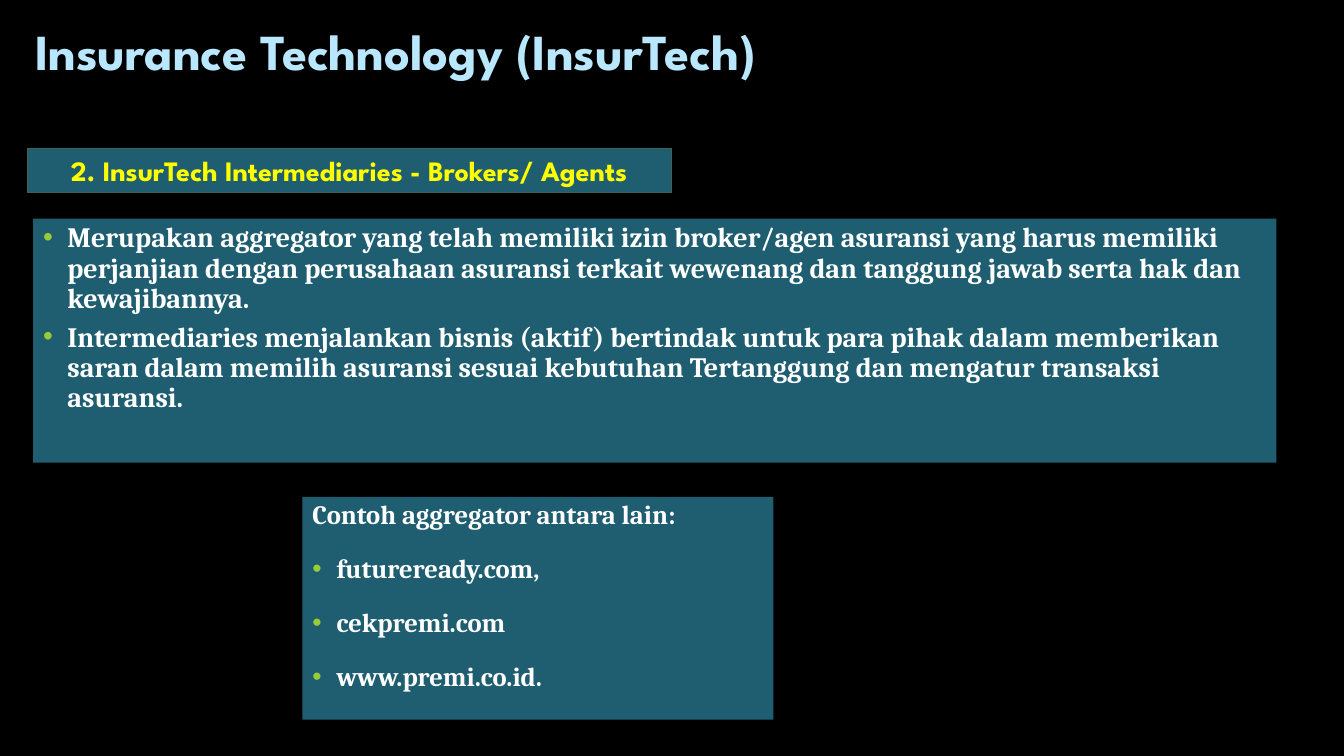
from lxml.etree import SubElement
from pptx import Presentation
from pptx.dml.color import RGBColor
from pptx.enum.shapes import MSO_SHAPE
from pptx.enum.text import MSO_ANCHOR, PP_ALIGN
from pptx.oxml.ns import qn
from pptx.util import Inches, Pt


def rgb(value):
    return RGBColor.from_string(value)


class SlideBuilder:
    PANEL = "1E5E70"
    BULLET = "99CB38"
    HEADING_FONT = "League Spartan"
    BODY_FONT = "Cambria"

    def __init__(self, slide):
        self.s = slide

    def background(self, color):
        fill = self.s.background.fill
        fill.solid()
        fill.fore_color.rgb = rgb(color)

    def run(self, p, text, size, font, color):
        r = p.add_run()
        r.text = text
        r.font.size = Pt(size)
        r.font.name = font
        r.font.bold = True
        r.font.color.rgb = rgb(color)

    def bullet(self, p):
        pPr = p._p.get_or_add_pPr()
        pPr.set("marL", str(Inches(0.24)))
        pPr.set("indent", str(-Inches(0.24)))
        clr = SubElement(pPr, qn("a:buClr"))
        SubElement(clr, qn("a:srgbClr")).set("val", self.BULLET)
        SubElement(pPr, qn("a:buFont")).set("typeface", "Arial")
        SubElement(pPr, qn("a:buChar")).set("char", "•")

    def title(self, text, x, y, w, h):
        sp = self.s.shapes.add_textbox(Inches(x), Inches(y), Inches(w), Inches(h))
        tf = sp.text_frame
        tf.word_wrap = True
        tf.vertical_anchor = MSO_ANCHOR.BOTTOM
        p = tf.paragraphs[0]
        p.line_spacing = 0.9
        self.run(p, text, 36, self.HEADING_FONT, "B9E7FD")

    def panel(self, x, y, w, h, anchor=MSO_ANCHOR.TOP, line=None):
        sp = self.s.shapes.add_shape(
            MSO_SHAPE.RECTANGLE, Inches(x), Inches(y), Inches(w), Inches(h))
        sp.shadow.inherit = False
        sp.fill.solid()
        sp.fill.fore_color.rgb = rgb(self.PANEL)
        if line:
            sp.line.color.rgb = rgb(line)
            sp.line.width = Pt(0.75)
        else:
            sp.line.fill.background()
        tf = sp.text_frame
        tf.word_wrap = True
        tf.vertical_anchor = anchor
        return tf

    def heading(self, text, x, y, w, h):
        tf = self.panel(x, y, w, h, MSO_ANCHOR.MIDDLE, "455F51")
        p = tf.paragraphs[0]
        p.alignment = PP_ALIGN.CENTER
        self.run(p, text, 20, self.HEADING_FONT, "FFFF00")

    def text_panel(self, bullets, x, y, w, h, size, gap, intro=None):
        tf = self.panel(x, y, w, h)
        lines = [intro] * bool(intro) + bullets
        for i, text in enumerate(lines):
            p = tf.add_paragraph() if i else tf.paragraphs[0]
            p.alignment = PP_ALIGN.LEFT
            p.line_spacing = 0.9
            if i:
                p.space_before = Pt(gap)
            if text != intro:
                self.bullet(p)
            self.run(p, text, size, self.BODY_FONT, "FFFFFF")


def main():
    prs = Presentation()
    prs.slide_width = Inches(13.33)
    prs.slide_height = Inches(7.5)
    b = SlideBuilder(prs.slides.add_slide(prs.slide_layouts[6]))
    b.background("000000")
    b.title("Insurance Technology (InsurTech)", 0.25, 0.12, 11.33, 0.74)
    b.heading("2. InsurTech Intermediaries - Brokers/ Agents", 0.27, 1.47, 6.39, 0.44)
    b.text_panel([
        "Merupakan aggregator yang telah memiliki izin broker/agen asuransi yang "
        "harus memiliki perjanjian dengan perusahaan asuransi terkait wewenang dan "
        "tanggung jawab serta hak dan kewajibannya.",
        "Intermediaries menjalankan bisnis (aktif) bertindak untuk para pihak dalam "
        "memberikan saran dalam memilih asuransi sesuai kebutuhan Tertanggung dan "
        "mengatur transaksi asuransi.",
    ], 0.33, 2.17, 12.33, 2.42, size=20, gap=6)
    b.text_panel(["futureready.com,", "cekpremi.com", "www.premi.co.id."],
                 3, 4.93, 4.67, 2.21, size=19, gap=18,
                 intro="Contoh aggregator antara lain:")
    prs.save("out.pptx")


if __name__ == "__main__":
    main()
